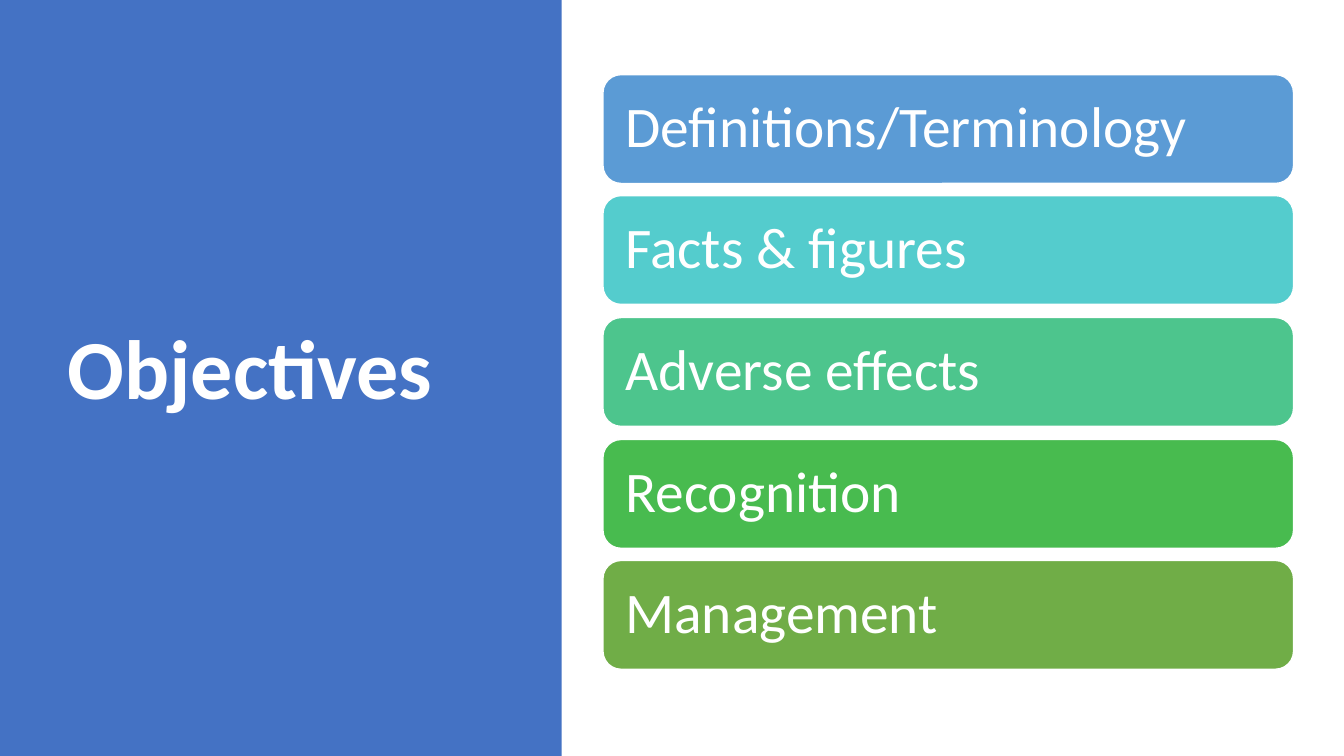
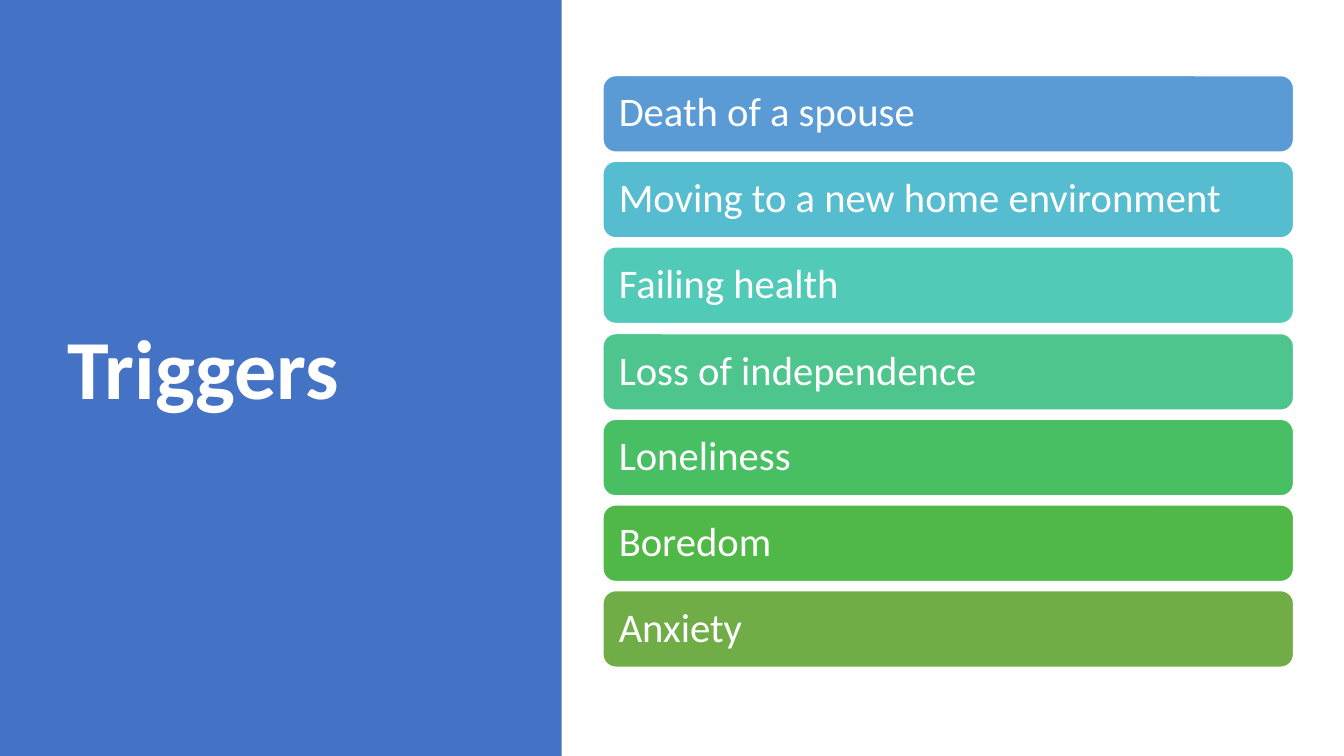
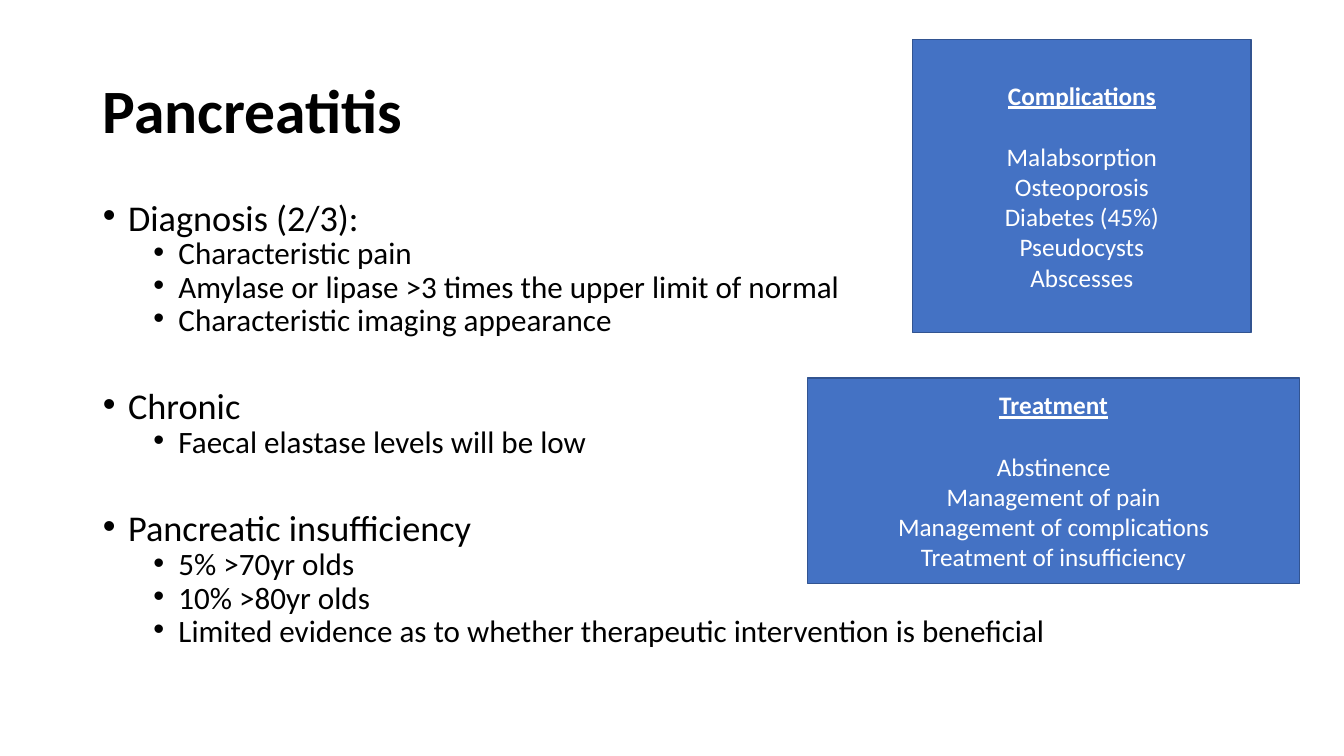
from dataclasses import dataclass

from lxml import etree
from pptx import Presentation
from pptx.dml.color import RGBColor
from pptx.enum.shapes import MSO_SHAPE
from pptx.enum.text import MSO_ANCHOR, MSO_AUTO_SIZE, PP_ALIGN
from pptx.oxml.ns import qn
from pptx.util import Pt

EMU_PER_PX = 9144  # 100 px to the inch
RECTANGLE, ROUNDED = MSO_SHAPE.RECTANGLE, MSO_SHAPE.ROUNDED_RECTANGLE
LEFT, CENTER = PP_ALIGN.LEFT, PP_ALIGN.CENTER
TOP, MIDDLE = MSO_ANCHOR.TOP, MSO_ANCHOR.MIDDLE
NO_AUTOFIT = MSO_AUTO_SIZE.NONE
TITLE_AND_CONTENT, TITLE_ONLY = 1, 5


@dataclass(frozen=True)
class Theme:
    font: str = "Calibri"
    white: str = "FFFFFF"
    black: str = "000000"
    blue: str = "4472C4"
    blue_edge: str = "325491"
    panel_title: float = 60
    page_title: float = 44
    topic: float = 25.9
    detail: float = 22.2
    box: float = 18
    bar_large: float = 41
    bar_small: float = 29


THEME = Theme()


@dataclass(frozen=True)
class BarStack:
    """Equal bars, the first at first_top and the last at last_top."""
    first_top: int
    last_top: int
    height: int
    inset: int
    size: float


LARGE_BARS = BarStack(74, 556, 108, 17, THEME.bar_large)
SMALL_BARS = BarStack(75, 586, 76, 12, THEME.bar_small)

OBJECTIVES = [
    ("Definitions/Terminology", "5B9BD5"),
    ("Facts & figures", "54CCCD"),
    ("Adverse effects", "4DC58D"),
    ("Recognition", "48BB4F"),
    ("Management", "70AD47"),
]
TRIGGERS = [
    ("Death of a spouse", "5B9BD5"),
    ("Moving to a new home environment", "56BCD0"),
    ("Failing health", "52CAB8"),
    ("Loss of independence", "4DC58D"),
    ("Loneliness", "49BF64"),
    ("Boredom", "50B846"),
    ("Anxiety", "70AD47"),
]
PANCREATITIS = [
    ("Diagnosis (2/3):", [
        "Characteristic pain",
        "Amylase or lipase >3 times the upper limit of normal",
        "Characteristic imaging appearance",
    ]),
    ("Chronic", ["Faecal elastase levels will be low"]),
    ("Pancreatic insufficiency", [
        "5% >70yr olds",
        "10% >80yr olds",
        "Limited evidence as to whether therapeutic intervention is beneficial",
    ]),
]
COMPLICATIONS = ["Malabsorption", "Osteoporosis", "Diabetes (45%)",
                 "Pseudocysts", "Abscesses"]
TREATMENT = ["Abstinence", "Management of pain",
             "Management of complications", "Treatment of insufficiency"]


def px(length):
    return length * EMU_PER_PX


def write(paragraph, text, size, color, align=LEFT, bold=False, underline=False):
    paragraph.text = text
    paragraph.alignment = align
    font = paragraph.font
    font.name, font.size = THEME.font, Pt(size)
    font.bold, font.underline = bold, underline
    font.color.rgb = RGBColor.from_string(color)


def next_paragraph(frame):
    """The empty first paragraph, or a new one after the text."""
    first = frame.paragraphs[0]
    return frame.add_paragraph() if first.text else first


def place(placeholder, left, top, width, height, anchor):
    placeholder.left, placeholder.top = px(left), px(top)
    placeholder.width, placeholder.height = px(width), px(height)
    frame = placeholder.text_frame
    frame.auto_size = NO_AUTOFIT
    frame.vertical_anchor = anchor
    return frame


def add_title(slide, text, area, size, color):
    heading = place(slide.shapes.title, *area, MIDDLE).paragraphs[0]
    write(heading, text, size, color, bold=True)
    heading.line_spacing = 0.9


def add_block(slide, kind, area, fill, edge=None):
    block = slide.shapes.add_shape(kind, *map(px, area))
    block.shadow.inherit = False
    block.fill.solid()
    block.fill.fore_color.rgb = RGBColor.from_string(fill)
    if edge:
        block.line.color.rgb = RGBColor.from_string(edge)
        block.line.width = Pt(1)
    else:
        block.line.fill.background()
    block.text_frame.word_wrap = True
    block.text_frame.vertical_anchor = MIDDLE
    return block


def add_bars(slide, items, stack):
    pitch = (stack.last_top - stack.first_top) / (len(items) - 1)
    for index, (label, color) in enumerate(items):
        top = stack.first_top + round(index * pitch)
        bar = add_block(slide, ROUNDED, (598, top, 685, stack.height),
                        color, THEME.white)
        frame = bar.text_frame
        frame.margin_left = frame.margin_right = px(stack.inset)
        frame.margin_top = frame.margin_bottom = px(stack.inset)
        write(frame.paragraphs[0], label, stack.size, THEME.white)
        frame.paragraphs[0].line_spacing = 0.9


def add_panel_slide(deck, title, items, stack):
    slide = deck.slides.add_slide(deck.slide_layouts[TITLE_ONLY])
    panel = add_block(slide, RECTANGLE, (0, 0, 557, 750), THEME.blue)
    slide.shapes.title._element.addprevious(panel._element)
    add_title(slide, title, (57, 68, 416, 602), THEME.panel_title, THEME.white)
    add_bars(slide, items, stack)


def add_bullet(frame, text, level, size, space_before):
    paragraph = next_paragraph(frame)
    paragraph.level = level
    properties = paragraph._p.get_or_add_pPr()
    properties.set("marL", str(px(25 + 50 * level)))
    properties.set("indent", str(px(-25)))
    etree.SubElement(properties, qn("a:buChar")).set("char", "•")
    write(paragraph, text, size, THEME.black)
    paragraph.line_spacing = 0.7
    paragraph.space_before = Pt(space_before)


def add_outline(slide, topics):
    frame = place(slide.placeholders[1], 92, 200, 1150, 476, TOP)
    for index, (topic, details) in enumerate(topics):
        add_bullet(frame, topic, 0, THEME.topic, 42 if index else 0)
        for detail in details:
            add_bullet(frame, detail, 1, THEME.detail, 5)


def add_summary_box(slide, heading, lines, area):
    frame = add_block(slide, RECTANGLE, area, THEME.blue,
                      THEME.blue_edge).text_frame
    title = frame.paragraphs[0]
    write(title, heading, THEME.box, THEME.white, CENTER, True, True)
    title.space_after = Pt(22)
    for line in lines:
        write(next_paragraph(frame), line, THEME.box, THEME.white, CENTER)


def add_pancreatitis_slide(deck):
    slide = deck.slides.add_slide(deck.slide_layouts[TITLE_AND_CONTENT])
    add_title(slide, "Pancreatitis", (92, 40, 1150, 145),
              THEME.page_title, THEME.black)
    add_outline(slide, PANCREATITIS)
    add_summary_box(slide, "Complications", COMPLICATIONS, (905, 39, 336, 291))
    add_summary_box(slide, "Treatment", TREATMENT, (801, 375, 488, 204))


def main():
    deck = Presentation()
    deck.slide_width, deck.slide_height = px(1333), px(750)
    add_panel_slide(deck, "Objectives", OBJECTIVES, LARGE_BARS)
    add_panel_slide(deck, "Triggers", TRIGGERS, SMALL_BARS)
    add_pancreatitis_slide(deck)
    deck.save("out.pptx")


if __name__ == "__main__":
    main()
